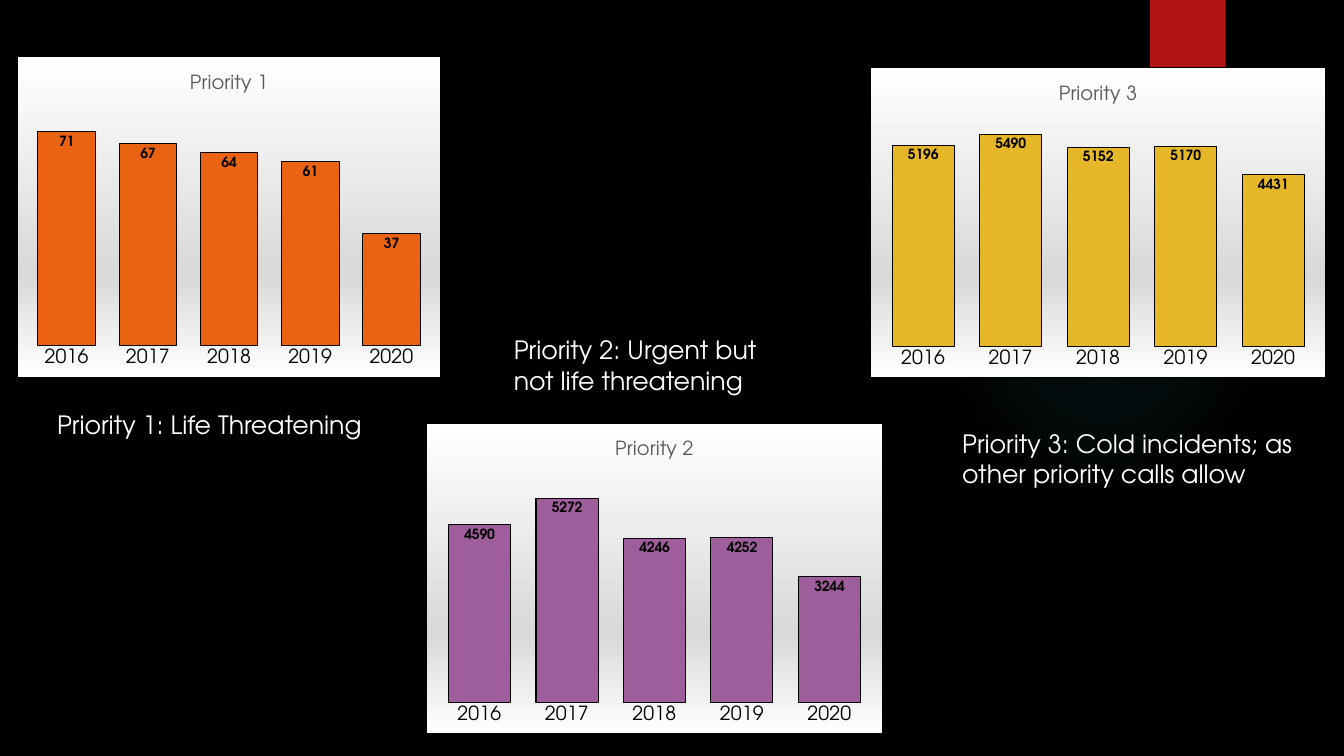
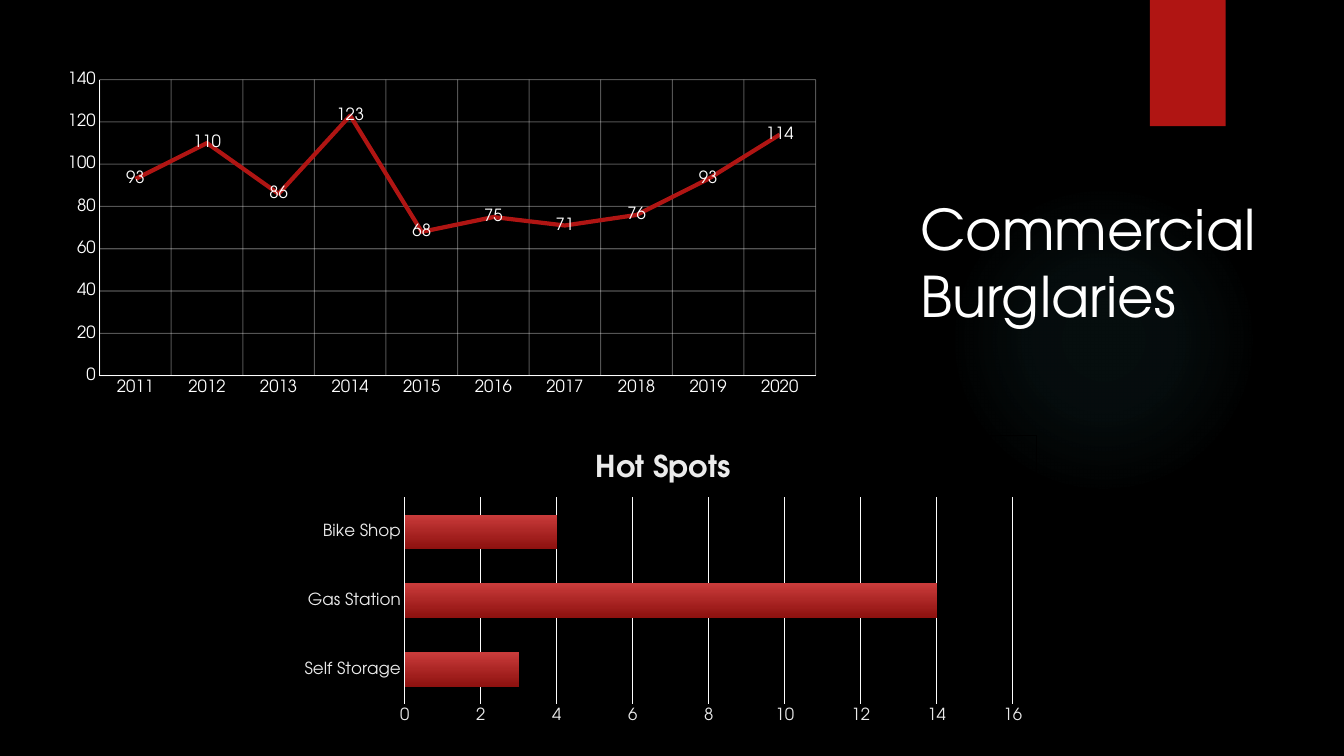
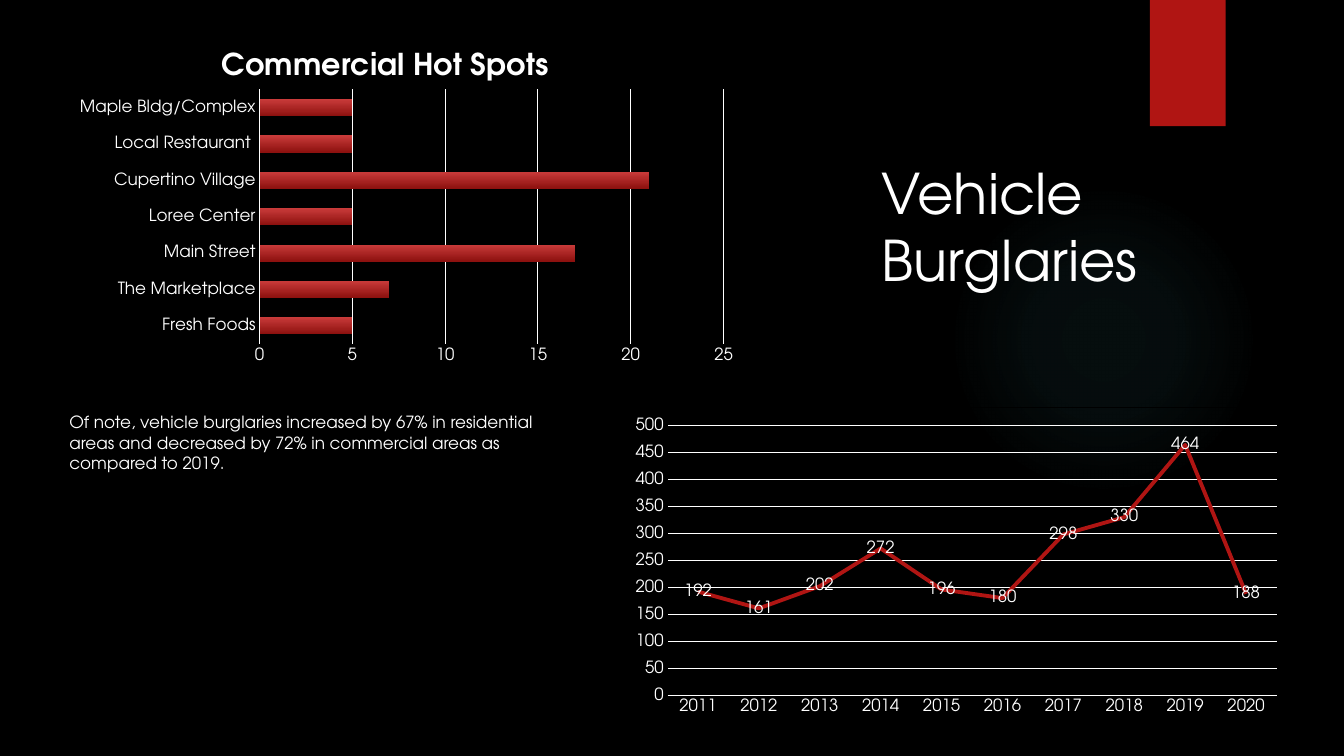
import pptx
import pptx.chart.data
import pptx.dml.color
import pptx.enum.chart
import pptx.enum.shapes
import pptx.oxml
import pptx.oxml.ns
import pptx.util

Cm, Pt = pptx.util.Cm, pptx.util.Pt
ChartType = pptx.enum.chart.XL_CHART_TYPE
LabelPosition = pptx.enum.chart.XL_LABEL_POSITION
Shape = pptx.enum.shapes.MSO_SHAPE
qn = pptx.oxml.ns.qn

FONT = "TeX Gyre Adventor"
BLACK, WHITE, RED = "000000", "FFFFFF", "B01513"
PALE, PALE_LINE, GREY = "EBEBEB", "FCFCFC", "595959"
GLOW = "50B9C1"
DOWN = '<a:lin ang="5400000" scaled="0"/>'
FROM_CENTRE = ('<a:path path="circle"><a:fillToRect l="50000" t="50000" '
               'r="50000" b="50000"/></a:path>')
BAR_STOPS = [(0, "C93B3A", 100), (100, "8D110F", 100)]
PANEL_STOPS = [(0, WHITE, 100), (68, "D9D9D9", 100), (100, WHITE, 100)]
GLOW_STOPS = [(0, GLOW, 7), (36, GLOW, 6), (69, GLOW, 0)]
PRIORITY_YEARS = [str(year) for year in range(2016, 2021)]
DECADE = [str(year) for year in range(2011, 2021)]


def rgb(colour):
    return pptx.dml.color.RGBColor.from_string(colour)


def cm_box(box):
    return [Cm(length) for length in box]


def apply(target, **values):
    """Set each named format value on the target."""
    for name, value in values.items():
        setattr(target, name, value)


def style_font(font, size, colour, bold=False):
    apply(font, name=FONT, size=Pt(size), bold=bold)
    font.color.rgb = rgb(colour)


def style_line(line, colour, width, opacity=100):
    """Draw a solid line, or none when no colour is given."""
    if colour is None:
        line.fill.background()
        return
    line.color.rgb = rgb(colour)
    line.width = Pt(width)
    if opacity < 100:
        tint = line._get_or_add_ln().find(".//" + qn("a:srgbClr"))
        tint.append(drawing_xml("alpha", f'val="{opacity * 1000}"'))


def drawing_xml(tag, attributes="", inner=""):
    return pptx.oxml.parse_xml(
        f'<a:{tag} {pptx.oxml.ns.nsdecls("a")} {attributes}>{inner}</a:{tag}>')


def gradient(stops, direction):
    marks = "".join(
        f'<a:gs pos="{place * 1000}"><a:srgbClr val="{colour}">'
        f'<a:alpha val="{opacity * 1000}"/></a:srgbClr></a:gs>'
        for place, colour, opacity in stops)
    return drawing_xml("gradFill", 'rotWithShape="1"', f"<a:gsLst>{marks}</a:gsLst>{direction}")


def add_page(deck):
    """Add a blank page with the glow and the red band."""
    page = deck.slides.add_slide(deck.slide_layouts[6])
    glow = page.shapes.add_shape(Shape.OVAL, *cm_box((23.9, 4.65, 7.82, 7.82)))
    glow.shadow.inherit = False
    glow.line.fill.background()
    glow._element.spPr.find(qn("a:prstGeom")).addnext(gradient(GLOW_STOPS, FROM_CENTRE))

    band = page.shapes.add_shape(Shape.RECTANGLE, *cm_box((28.98, 0, 1.91, 3.18)))
    band.shadow.inherit = False
    band.fill.solid()
    band.fill.fore_color.rgb = rgb(RED)
    band.line.fill.background()
    shade = drawing_xml(
        "outerShdw", f'blurRad="{Pt(3)}" dist="{Pt(2)}" dir="5400000" rotWithShape="0"',
        f'<a:srgbClr val="{BLACK}"><a:alpha val="45000"/></a:srgbClr>')
    band._element.spPr.find(qn("a:effectLst")).append(shade)
    return page


def add_text(page, box, text, size):
    frame = page.shapes.add_textbox(*cm_box(box)).text_frame
    frame.word_wrap = True
    para = frame.paragraphs[0]
    span = para.add_run()
    span.text = text
    style_font(span.font, size, WHITE)


def set_plot_box(chart, plot_box):
    """Fix the inner plot area as fractions of the chart box."""
    sides = "".join(f'<c:{side}Mode val="edge"/>' for side in "xy")
    sides += "".join(f'<c:{side} val="{part}"/>' for side, part in zip("xywh", plot_box))
    layout = pptx.oxml.parse_xml(
        f'<c:layout {pptx.oxml.ns.nsdecls("c")}><c:manualLayout>'
        f'<c:layoutTarget val="inner"/>{sides}</c:manualLayout></c:layout>')
    area = chart._chartSpace.chart.plotArea
    for old in area.findall(qn("c:layout")):
        area.remove(old)
    area.insert(0, layout)


def set_chart_frame(chart, stops=None):
    """Give the chart a black border, and a gradient ground if stops are given."""
    frame = pptx.oxml.parse_xml(f'<c:spPr {pptx.oxml.ns.nsdecls("c", "a")}/>')
    frame.append(gradient(stops, DOWN) if stops else drawing_xml("noFill"))
    frame.append(drawing_xml(
        "ln", f'w="{Pt(0.75)}"',
        f'<a:solidFill><a:srgbClr val="{BLACK}"/></a:solidFill>'))
    chart._chartSpace.chart.addnext(frame)


def add_chart(page, kind, box, categories, values, plot_box, top):
    data = pptx.chart.data.CategoryChartData()
    data.categories = categories
    data.add_series("Series 1", values)
    chart = page.shapes.add_chart(kind, *cm_box(box), data).chart
    apply(chart, has_legend=False, has_title=False)
    style_font(chart.font, 10, WHITE)
    chart.plots[0].vary_by_categories = False
    apply(chart.value_axis, minimum_scale=0, maximum_scale=top)
    set_plot_box(chart, plot_box)
    return chart


def add_chart_title(chart, text, size, colour, bold):
    chart.has_title = True
    chart.chart_title.include_in_layout = False
    para = chart.chart_title.text_frame.paragraphs[0]
    span = para.add_run()
    span.text = text
    style_font(span.font, size, colour, bold)


def style_axis(axis, size, colour, line=(None, 0), grid=None):
    no_tick = pptx.enum.chart.XL_TICK_MARK.NONE
    apply(axis, major_tick_mark=no_tick, minor_tick_mark=no_tick,
          has_major_gridlines=grid is not None)
    style_font(axis.tick_labels.font, size, colour)
    style_line(axis.format.line, *line)
    if grid:
        style_line(axis.major_gridlines.format.line, *grid)


def add_value_labels(chart, position, size, colour, bold=False):
    plot = chart.plots[0]
    plot.has_data_labels = True
    apply(plot.data_labels, show_value=True, position=position)
    style_font(plot.data_labels.font, size, colour, bold)


def priority_chart(page, box, title, values, colour, top):
    chart = add_chart(page, ChartType.COLUMN_CLUSTERED, box, PRIORITY_YEARS, values,
                      (0.02, 0.15, 0.96, 0.75), top)
    add_chart_title(chart, title, 14, GREY, False)
    style_axis(chart.category_axis, 14, BLACK)
    apply(chart.value_axis, visible=False, has_major_gridlines=False)
    plot = chart.plots[0]
    plot.gap_width = 41
    look = plot.series[0].format
    look.fill.solid()
    look.fill.fore_color.rgb = rgb(colour)
    style_line(look.line, BLACK, 0.75)
    add_value_labels(chart, LabelPosition.INSIDE_END, 10, BLACK, True)
    set_chart_frame(chart, PANEL_STOPS)


def trend_chart(page, kind, box, values, plot_box, top, width, axis_line, value_line, grid,
                upright_grid=None):
    chart = add_chart(page, kind, box, DECADE, values, plot_box, top)
    style_axis(chart.category_axis, 12, WHITE, axis_line, upright_grid)
    style_axis(chart.value_axis, 12, WHITE, value_line, grid)
    series = chart.plots[0].series[0]
    series.smooth = False
    style_line(series.format.line, RED, width)
    add_value_labels(chart, LabelPosition.CENTER, 12, WHITE)
    set_chart_frame(chart)


def hot_spot_chart(page, box, title, spots, plot_box, top, gap, overlap, colour, axis_line, grid):
    chart = add_chart(page, ChartType.BAR_CLUSTERED, box, list(spots), list(spots.values()),
                      plot_box, top)
    add_chart_title(chart, title, 21.6, colour, True)
    style_axis(chart.category_axis, 12, colour, axis_line)
    style_axis(chart.value_axis, 12, colour, grid=grid)
    plot = chart.plots[0]
    apply(plot, gap_width=gap, overlap=overlap)
    plot.series[0]._element.get_or_add_spPr().insert(0, gradient(BAR_STOPS, DOWN))
    set_chart_frame(chart)


def priorities_page(deck):
    page = add_page(deck)
    panels = [
        ((0.43, 1.42, 10.69, 8.1), "Priority 1", [71, 67, 64, 61, 37], "EA6312", 80),
        ((10.74, 10.67, 11.51, 7.82), "Priority 2", [4590, 5272, 4246, 4252, 3244],
         "9E5E9B", 6000),
        ((21.92, 1.7, 11.51, 7.82), "Priority 3", [5196, 5490, 5152, 5170, 4431],
         "E6B729", 6000),
    ]
    for panel in panels:
        priority_chart(page, *panel)
    captions = [
        ((1.19, 10.19, 9.17, 1.02), "Priority 1: Life Threatening"),
        ((12.7, 8.31, 7.65, 1.8), "Priority 2: Urgent but not life threatening"),
        ((24, 10.67, 9.19, 1.8), "Priority 3: Cold incidents; as other priority calls allow"),
    ]
    for box, text in captions:
        add_text(page, box, text, 18)


def commercial_page(deck):
    page = add_page(deck)
    thin, faint = (WHITE, 0.25), (WHITE, 0.75, 32)
    trend_chart(page, ChartType.LINE, (1.3, 1.63, 19.66, 8.53),
                [93, 110, 86, 123, 68, 75, 71, 76, 93, 114],
                (0.061, 0.043, 0.919, 0.877), 140, 3, thin, thin, faint, faint)
    add_text(page, (22.94, 4.78, 9.02, 3.68), "Commercial Burglaries", 40)
    spots = {"Self Storage": 3, "Gas Station": 14, "Bike Shop": 4}
    pale = (PALE_LINE, 0.75)
    hot_spot_chart(page, (7.29, 10.95, 18.85, 7.47), "Hot Spots", spots,
                   (0.154, 0.211, 0.814, 0.7), 16, 100, 0, PALE, pale, pale)


def vehicle_page(deck):
    page = add_page(deck)
    spots = {"Fresh Foods": 5, "The Marketplace": 7, "Main Street": 17, "Loree Center": 5,
             "Cupertino Village": 21, "Local Restaurant ": 5, "Maple Bldg/Complex": 5}
    axis_line, grid = (WHITE, 1), (WHITE, 0.75)
    hot_spot_chart(page, (0.48, 0.79, 18.47, 8.94), "Commercial Hot Spots", spots,
                   (0.328, 0.163, 0.634, 0.719), 25, 115, -20, WHITE, axis_line, grid)
    add_text(page, (1.5, 10.26, 12.85, 1.8),
             "Of note, vehicle burglaries increased by 67% in residential areas and "
             "decreased by 72% in commercial areas as compared to 2019.", 12)
    trend_chart(page, ChartType.LINE_STACKED, (15.32, 10.26, 17.35, 8.33),
                [192, 161, 202, 272, 196, 180, 298, 330, 464, 188],
                (0.086, 0.054, 0.886, 0.819), 500, 2.75, axis_line, (None, 0), grid)
    add_text(page, (21.97, 3.86, 7.77, 3.68), "Vehicle Burglaries", 40)


def main():
    deck = pptx.Presentation()
    apply(deck, slide_width=Cm(33.87), slide_height=Cm(19.05))
    ground = deck.slide_master.background.fill
    ground.solid()
    ground.fore_color.rgb = rgb(BLACK)
    for build_page in (priorities_page, commercial_page, vehicle_page):
        build_page(deck)
    deck.save("out.pptx")


if __name__ == "__main__":
    main()
